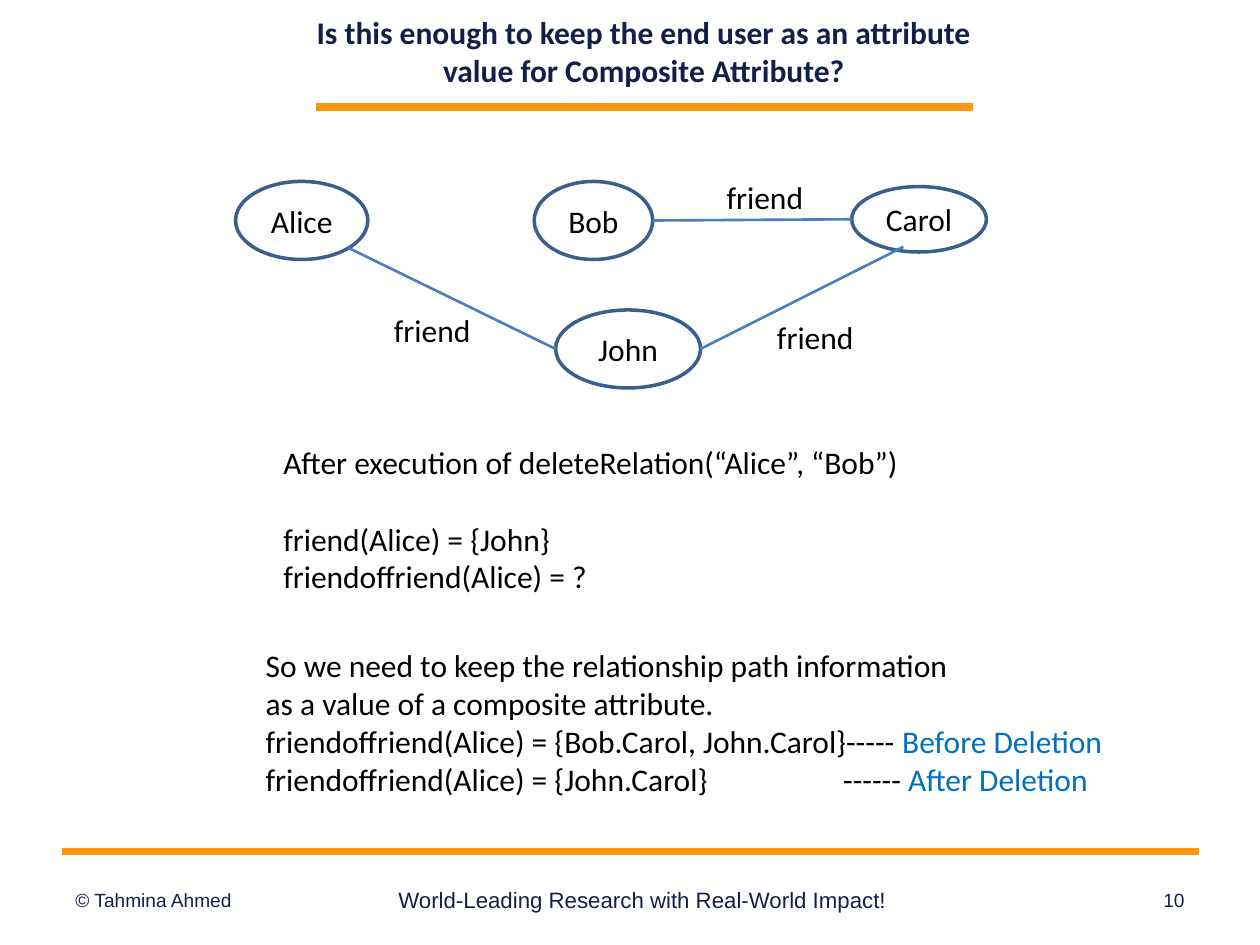
from lxml import etree
from pptx import Presentation
from pptx import util as u
from pptx.dml import color
from pptx.enum import shapes, text
from pptx.oxml import ns

NAVY, ORANGE, BLUE = "131F49", "FF950E", "0070C0"
BLACK, WHITE, RIM, EDGE = "000000", "FFFFFF", "3A5F8C", "4B7EBC"
LEFT, MID, RIGHT = text.PP_ALIGN.LEFT, text.PP_ALIGN.CENTER, text.PP_ALIGN.RIGHT


def rgb(code):
    return color.RGBColor.from_string(code)


class Deck:
    def __init__(self):
        self.prs = Presentation()
        self.prs.slide_width, self.prs.slide_height = u.Pt(720), u.Pt(540)
        self.slide = self.prs.slides.add_slide(self.prs.slide_layouts[5])
        self.items = self.slide.shapes

    def style(self, para, size=18, font="Calibri", hue=BLACK, bold=False, align=LEFT):
        para.alignment = align
        for run in para.runs:
            run.font.size, run.font.name = u.Pt(size), font
            run.font.bold, run.font.color.rgb = bold, rgb(hue)

    def title(self, box, words):
        item = self.items.title
        item.left, item.top, item.width, item.height = map(u.Pt, box)
        frame = item.text_frame
        frame.text = words
        frame.word_wrap = True
        frame.auto_size = text.MSO_AUTO_SIZE.NONE
        frame.vertical_anchor = text.MSO_ANCHOR.MIDDLE
        self.style(frame.paragraphs[0], hue=NAVY, bold=True, align=MID)

    def text(self, box, words, anchor=text.MSO_ANCHOR.TOP, **look):
        frame = self.items.add_textbox(*map(u.Pt, box)).text_frame
        frame.word_wrap = True
        frame.vertical_anchor = anchor
        frame.text = words
        for para in frame.paragraphs:
            self.style(para, **look)
        return frame.paragraphs

    def tail(self, para, words, hue):
        run = para.add_run()
        run.text = words
        run.font.size, run.font.name = u.Pt(18), "Calibri"
        run.font.color.rgb = rgb(hue)

    def tab(self, para, pos):
        tabs = etree.SubElement(para._p.get_or_add_pPr(), ns.qn("a:tabLst"))
        etree.SubElement(tabs, ns.qn("a:tab"), pos=str(u.Pt(pos)), algn="l")

    def shape(self, kind, box, words):
        item = self.items.add_shape(kind, *map(u.Pt, box))
        item.shadow.inherit = False
        frame = item.text_frame
        frame.text = words
        frame.vertical_anchor = text.MSO_ANCHOR.MIDDLE
        self.style(frame.paragraphs[0], align=MID)
        return item

    def node(self, box, words):
        item = self.shape(shapes.MSO_SHAPE.OVAL, box, words)
        item.fill.background()
        item.line.color.rgb, item.line.width = rgb(RIM), u.Pt(2)

    def label(self, left, top):
        item = self.shape(shapes.MSO_SHAPE.RECTANGLE, (left, top, 75, 36.7), "friend")
        item.fill.solid()
        item.fill.fore_color.rgb = rgb(WHITE)
        item.line.fill.background()

    def line(self, ends, hue, width):
        item = self.items.add_connector(shapes.MSO_CONNECTOR.STRAIGHT, *map(u.Pt, ends))
        item.line.color.rgb, item.line.width = rgb(hue), u.Pt(width)
        etree.SubElement(item._element.spPr, ns.qn("a:effectLst"))


def main():
    deck = Deck()

    # Title and orange rules
    deck.title((164.2, 4.3, 407.5, 49.7),
               "Is this enough to keep the end user as an attribute value for Composite Attribute?")
    deck.line((180.7, 61.2, 555.8, 61.2), ORANGE, 4.3)
    deck.line((35.3, 486.7, 685.4, 486.7), ORANGE, 4.3)

    # Footer
    for left, width, size, align, words in (
            (36, 168, 10.9, LEFT, "© Tahmina Ahmed"),
            (218, 298, 12.7, MID, "World-Leading Research with Real-World Impact!"),
            (529, 155, 10.9, RIGHT, "10")):
        deck.text((left, 499.7, width, 28.8), words, text.MSO_ANCHOR.MIDDLE,
                  size=size, font="Arial", hue=NAVY, align=align)

    # Friend graph: people, labels, edges
    for name, box in (("Alice", (134.6, 103.7, 75.6, 44.6)),
                      ("Bob", (305.3, 103.7, 67.7, 44.6)),
                      ("Carol", (486.7, 106.6, 77, 37.4)),
                      ("John", (317.5, 177.1, 82.8, 44.6))):
        deck.node(box, name)
    for spot in ((399.6, 94.3), (209.5, 169.9), (428.4, 174.2)):
        deck.label(*spot)
    for ends in ((373, 126, 486.7, 125.3),
                 (400.3, 199.4, 516.2, 141.1),
                 (317.5, 199.4, 199.4, 141.8)):
        deck.line(ends, EDGE, 1.5)

    # Result of the deletion
    paras = deck.text((154.8, 249.8, 427.7, 94.3),
                      "After execution of deleteRelation(“Alice”, “Bob”)\n"
                      "friend(Alice) = {John}\n"
                      "friendoffriend(Alice) = ?")
    paras[1].space_before = u.Pt(22)

    # Conclusion, before and after
    paras = deck.text((144.7, 365.8, 550.8, 116.6),
                      "So we need to keep the relationship path information\n"
                      "as a value of a composite attribute.\n"
                      "friendoffriend(Alice) = {Bob.Carol, John.Carol}----- \n"
                      "friendoffriend(Alice) = {John.Carol}\t------ ")
    deck.tab(paras[3], 330)
    deck.tail(paras[2], "Before Deletion", BLUE)
    deck.tail(paras[3], "After Deletion", BLUE)

    deck.prs.save("out.pptx")


if __name__ == "__main__":
    main()
